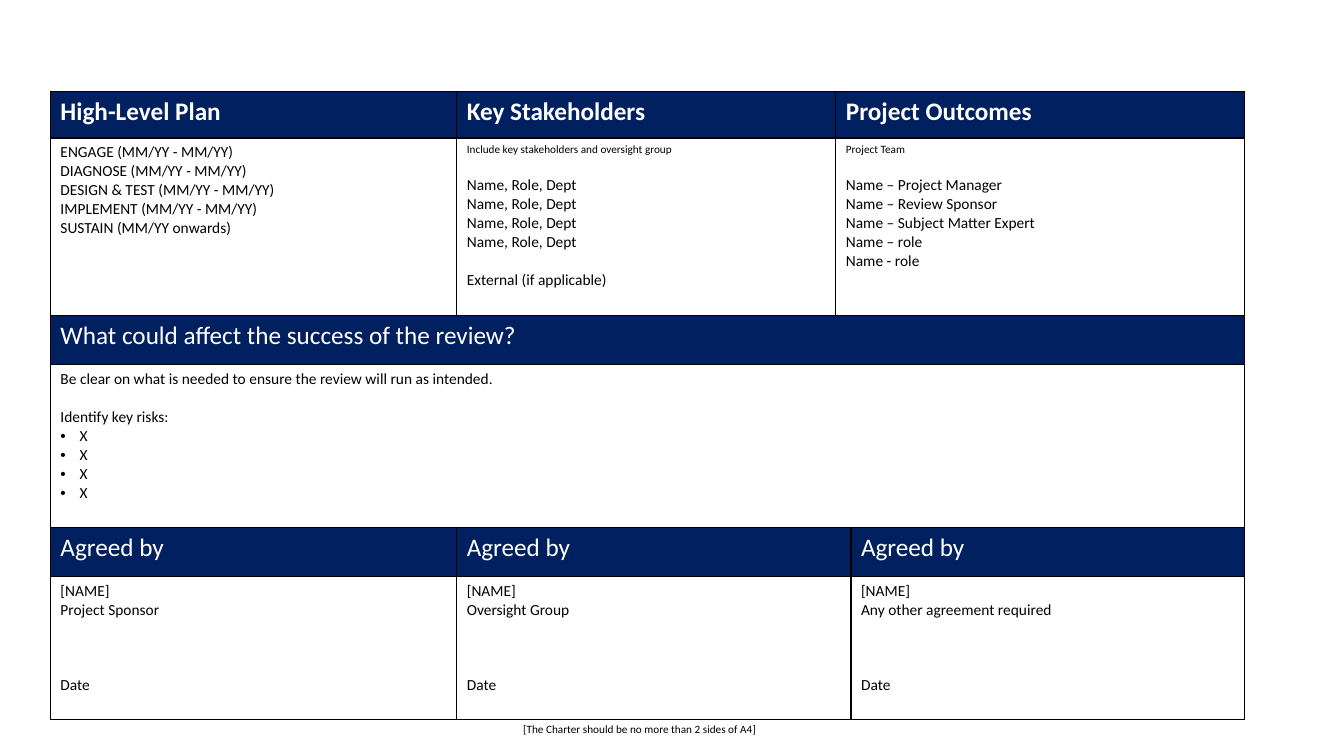
from lxml.etree import SubElement
from pptx import Presentation
from pptx.dml.color import RGBColor
from pptx.enum.text import MSO_AUTO_SIZE
from pptx.oxml.ns import qn
from pptx.util import Inches, Pt

NAVY, WHITE, BLACK = "002060", "FFFFFF", "000000"
FONT = "Calibri"
COLUMNS = [4.03, 3.76, 0.15, 3.9]
ROWS = [0.46, 1.76, 0.49, 1.61, 0.49, 1.42]
LEFT, TOP = 0.5, 0.91
TITLE, BODY, NOTE = 18, 11, 8
LINE_GAP = 13.4
BULLET_INDENT = Inches(0.19)


def color(code):
    return RGBColor.from_string(code)


def style(para, size, code=BLACK, bold=False):
    font = para.font
    font.name, font.size, font.bold = FONT, Pt(size), bold
    font.color.rgb = color(code)


def add_bullet(para):
    props = para._p.get_or_add_pPr()
    props.set("marL", str(BULLET_INDENT))
    props.set("indent", str(-BULLET_INDENT))
    SubElement(props, qn("a:buFont"), typeface="Arial")
    SubElement(props, qn("a:buChar"), char="•")


def add_borders(cell):
    props = cell._tc.get_or_add_tcPr()
    for side in ("lnL", "lnR", "lnT", "lnB"):
        line = SubElement(props, qn(f"a:{side}"), w=str(Pt(1)))
        fill = SubElement(line, qn("a:solidFill"))
        SubElement(fill, qn("a:srgbClr"), val=BLACK)


def write_lines(cell, lines, gaps=None, note=False, bullets_from=None):
    gaps = gaps or {}
    frame = cell.text_frame
    for index, text in enumerate(lines):
        para = frame.add_paragraph() if index else frame.paragraphs[0]
        para.text = text
        if bullets_from is not None and index >= bullets_from:
            add_bullet(para)
        if index in gaps:
            para.space_before = Pt(gaps[index] * LINE_GAP)
        style(para, NOTE if note and index == 0 else BODY)


def write_heading(cell, text, bold=False):
    cell.fill.solid()
    cell.fill.fore_color.rgb = color(NAVY)
    para = cell.text_frame.paragraphs[0]
    para.text = text
    style(para, TITLE, WHITE, bold)


def add_grid(page):
    frame = page.shapes.add_table(
        len(ROWS), len(COLUMNS), Inches(LEFT), Inches(TOP),
        Inches(sum(COLUMNS)), Inches(sum(ROWS)))
    table = frame.table
    table.first_row = table.horz_banding = False
    for column, width in zip(table.columns, COLUMNS):
        column.width = Inches(width)
    for row, height in zip(table.rows, ROWS):
        row.height = Inches(height)
    for cell in table.iter_cells():
        add_borders(cell)
        cell.fill.background()
    spans = [(0, 2, 3), (1, 2, 3), (2, 0, 3), (3, 0, 3), (4, 1, 2), (5, 1, 2)]
    for row, first, last in spans:
        table.cell(row, first).merge(table.cell(row, last))
    return table


def fill_plan(table):
    headings = ["High-Level Plan", "Key Stakeholders", "Project Outcomes"]
    for column, text in enumerate(headings):
        write_heading(table.cell(0, column), text, bold=True)
    phases = [f"{phase} (MM/YY - MM/YY)" for phase in
              ("ENGAGE", "DIAGNOSE", "DESIGN & TEST", "IMPLEMENT")]
    write_lines(table.cell(1, 0), phases + ["SUSTAIN (MM/YY onwards)"])
    write_lines(
        table.cell(1, 1),
        ["Include key stakeholders and oversight group",
         *["Name, Role, Dept"] * 4, "External (if applicable)"],
        gaps={1: 1, 5: 1}, note=True)
    write_lines(
        table.cell(1, 2),
        ["Project Team", "Name – Project Manager", "Name – Review Sponsor",
         "Name – Subject Matter Expert", "Name – role", "Name - role"],
        gaps={1: 1}, note=True)


def fill_risks(table):
    write_heading(table.cell(2, 0),
                  "What could affect the success of the review?")
    write_lines(
        table.cell(3, 0),
        ["Be clear on what is needed to ensure the review will run as intended.",
         "Identify key risks:", *["X"] * 4],
        gaps={1: 1}, bullets_from=2)


def fill_agreements(table):
    signatories = {0: "Project Sponsor", 1: "Oversight Group",
                   3: "Any other agreement required"}
    for column, role in signatories.items():
        write_heading(table.cell(4, column), "Agreed by")
        write_lines(table.cell(5, column), ["[NAME]", role, "Date"],
                    gaps={2: 3})


def add_footnote(page):
    box = page.shapes.add_textbox(
        Inches(5.09), Inches(7.12), Inches(2.67), Inches(0.24))
    frame = box.text_frame
    frame.word_wrap = True
    frame.auto_size = MSO_AUTO_SIZE.SHAPE_TO_FIT_TEXT
    para = frame.paragraphs[0]
    para.text = "[The Charter should be no more than 2 sides of A4]"
    style(para, NOTE)


def main():
    deck = Presentation()
    deck.slide_width, deck.slide_height = Inches(13.33), Inches(7.5)
    page = deck.slides.add_slide(deck.slide_layouts[6])
    table = add_grid(page)
    fill_plan(table)
    fill_risks(table)
    fill_agreements(table)
    add_footnote(page)
    deck.save("out.pptx")


if __name__ == "__main__":
    main()
